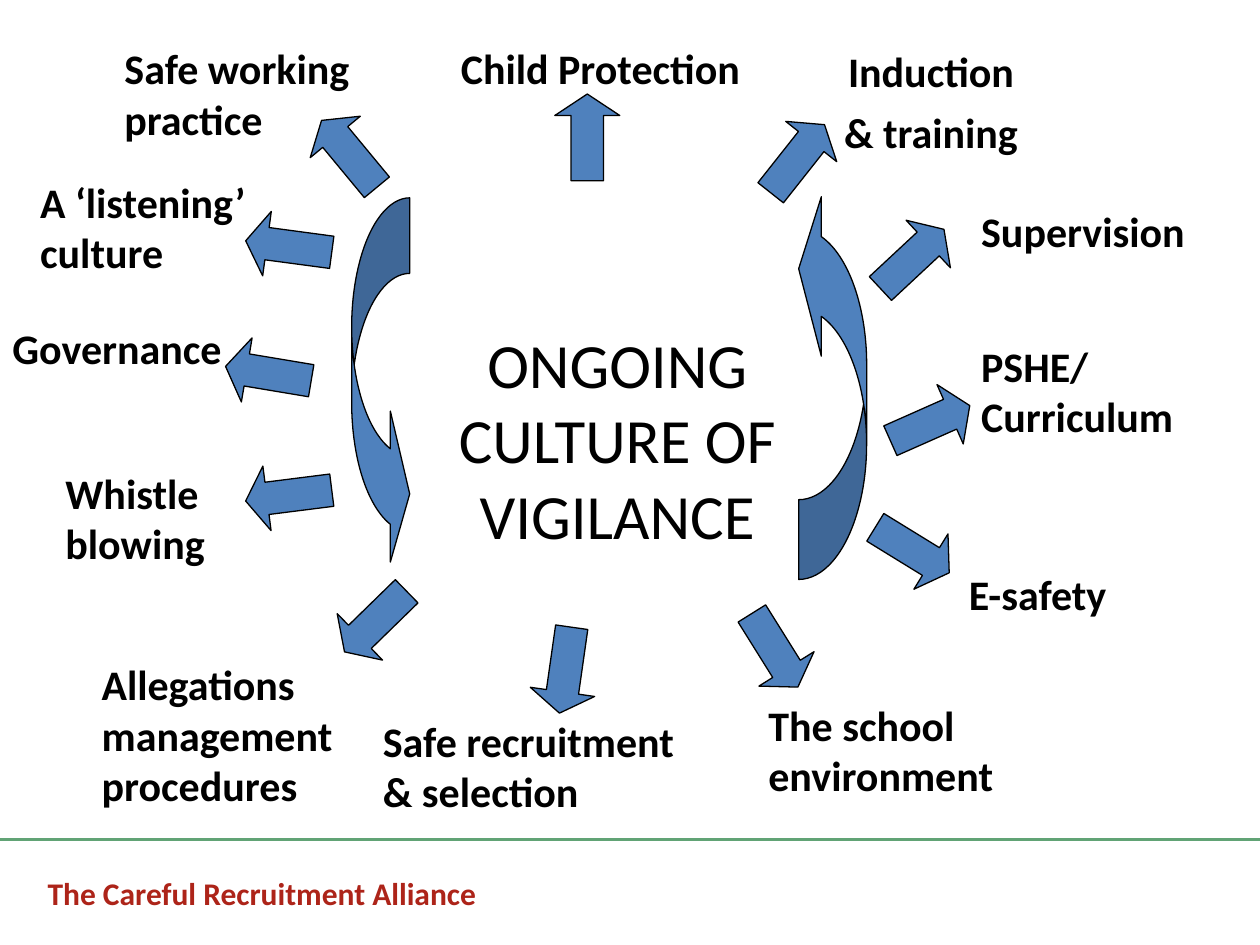
import pptx
import pptx.util
import pptx.dml.color
import pptx.enum.shapes
import pptx.enum.text
import pptx.oxml.ns
from dataclasses import dataclass
from lxml import etree

Cm = pptx.util.Cm
Pt = pptx.util.Pt
RGB = pptx.dml.color.RGBColor.from_string
SHAPES = pptx.enum.shapes.MSO_SHAPE
ALIGN = pptx.enum.text.PP_ALIGN


@dataclass
class Theme:
    font: str = "Calibri"
    ink: str = "000000"
    red: str = "AD2419"
    green: str = "61A375"
    blue: str = "4F81BD"
    title: int = 36
    label: int = 24
    footer: int = 18


theme = Theme()


def add_text(text, left, top, width, height, size, color=theme.ink, bold=True,
             align=ALIGN.LEFT, wrap=True, gap=0):
    box = page.shapes.add_textbox(Cm(left), Cm(top), Cm(width), Cm(height))
    box.text_frame.word_wrap = wrap
    box.text_frame.text = text
    looks = {"name": theme.font, "size": Pt(size), "bold": bold}
    for index, para in enumerate(box.text_frame.paragraphs):
        para.alignment = align
        para.space_before = Pt(gap if index else 0)
        for span in para.runs:
            for name, value in looks.items():
                setattr(span.font, name, value)
            span.font.color.rgb = RGB(color)


def add_arrow(kind, left, top, width, height, angle, adjustments):
    arrow = page.shapes.add_shape(kind, Cm(left), Cm(top), Cm(width), Cm(height))
    arrow.rotation = angle
    for index, value in enumerate(adjustments):
        arrow.adjustments[index] = value
    arrow.shadow.inherit = False
    arrow.fill.solid()
    arrow.fill.fore_color.rgb = RGB(theme.blue)
    arrow.line.color.rgb = RGB(theme.ink)
    arrow.line.width = Pt(0.75)


deck = pptx.Presentation()
deck.slide_width, deck.slide_height = Cm(25.4), Cm(19.05)
page = deck.slides.add_slide(deck.slide_layouts[6])

# Footer and rule
add_text("The Careful Recruitment Alliance", 0.71, 17.5, 21.41, 1.02,
         theme.footer, theme.red)
rule = page.shapes.add_connector(pptx.enum.shapes.MSO_CONNECTOR.STRAIGHT,
                                 0, Cm(16.92), deck.slide_width, Cm(16.92))
rule.line.color.rgb = RGB(theme.green)
rule.line.width = Pt(1.75)
etree.SubElement(rule._element.spPr, pptx.oxml.ns.qn("a:effectLst"))

# Topics around the circle: text, left, top, width, height
topics = [
    ("Child Protection", 9.04, 0.74, 7.65, 1.24),
    ("Supervision", 19.53, 4.01, 5.87, 1.24),
    ("PSHE/ Curriculum", 19.53, 6.73, 5.69, 2.31),
    ("E-safety", 19.28, 11.33, 5.49, 1.24),
    ("The school environment", 15.24, 13.97, 7.06, 2.21),
    ("Safe recruitment & selection", 7.47, 14.3, 6.65, 2.21),
    ("Allegations management procedures", 1.8, 13.16, 5.49, 3.33),
    ("Governance", 0, 6.38, 4.93, 1.24),
    ("Safe working practice", 2.26, 0.74, 6.32, 2.21),
    ("Whistle blowing", 1.07, 9.3, 4.9, 2.21),
    ("A ‘listening’ culture", 0.56, 3.43, 4.88, 2.31),
]
for topic in topics:
    add_text(*topic, theme.label)
add_text("Induction\n& training", 16.74, 0.79, 4.06, 3.56, theme.label,
         align=ALIGN.CENTER, wrap=False, gap=6)

# Two curved arrows forming the cycle
add_arrow(SHAPES.CURVED_RIGHT_ARROW, 7.09, 3.99, 1.17, 7.49, 0, (1.301, 2.601, 0.333))
add_arrow(SHAPES.CURVED_RIGHT_ARROW, 16.1, 3.81, 1.37, 7.87, 180, (1.173, 2.346, 0.333))

# Arrows pointing out to the topics: centre x, centre y, angle
arrow_width, arrow_height = 1.75, 1.31
pointers = [
    (11.84, 2.77, 270), (7.04, 3.1, 230.4), (16.08, 3.2, 308.3),
    (18.39, 5.22, 317), (11.4, 13.51, 98.1), (15.62, 13.11, 58),
    (18.39, 11.09, 31.6), (18.75, 8.53, 336.1), (5.82, 4.97, 187.6),
    (5.41, 7.53, 189.5), (5.82, 9.99, 172.8), (7.57, 12.53, 135.7),
]
for x, y, angle in pointers:
    add_arrow(SHAPES.RIGHT_ARROW, x - arrow_width / 2, y - arrow_height / 2,
              arrow_width, arrow_height, angle, (0.5, 0.33))

# Central message
add_text("ONGOING CULTURE OF\nVIGILANCE", 8.99, 6.43, 6.91, 4.88, theme.title,
         bold=False, align=ALIGN.CENTER)

deck.save("out.pptx")
